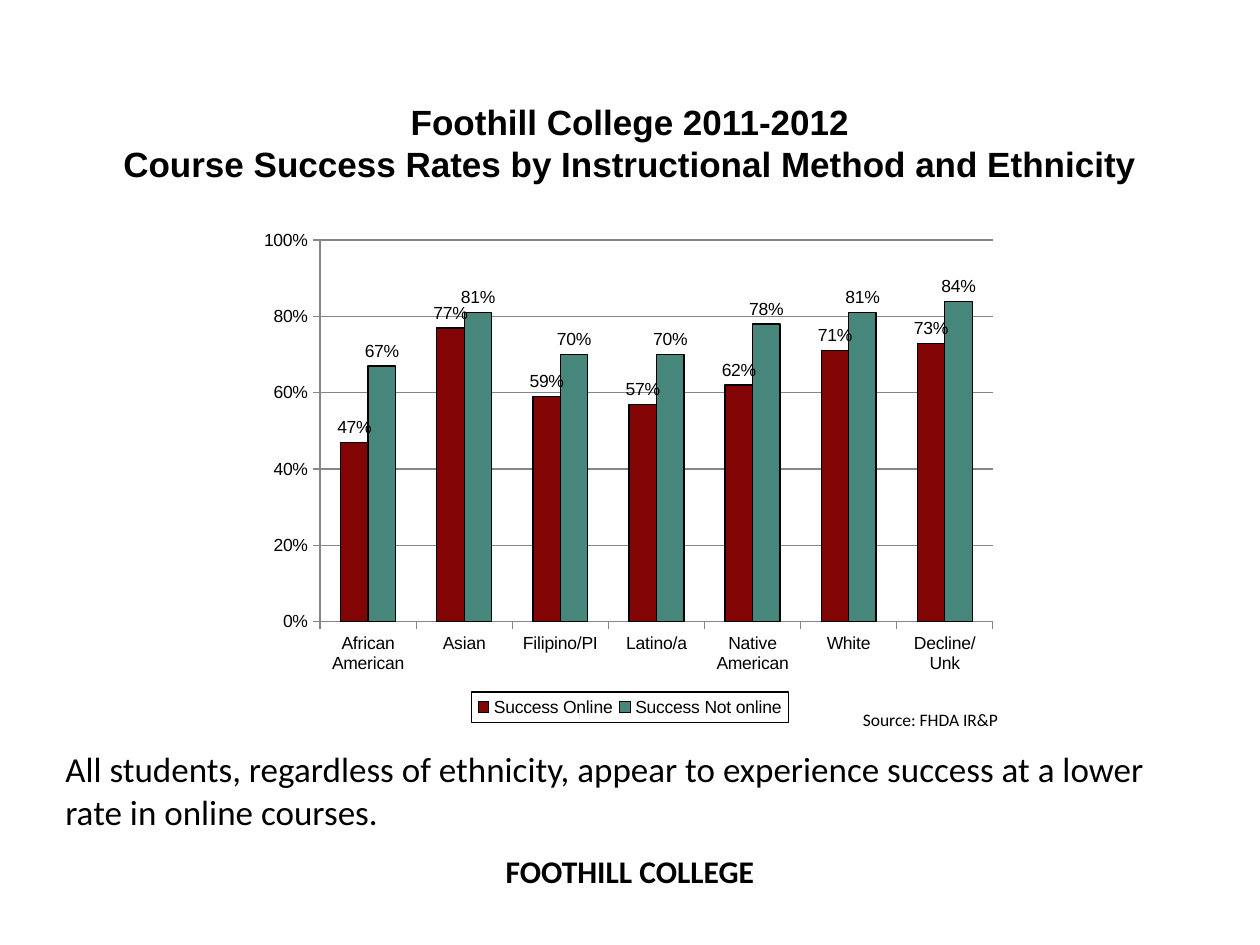
from lxml import etree
from pptx import Presentation
from pptx.chart.data import CategoryChartData
from pptx.dml.color import RGBColor
from pptx.enum.chart import XL_CHART_TYPE, XL_LABEL_POSITION, XL_LEGEND_POSITION, XL_TICK_MARK
from pptx.enum.text import MSO_ANCHOR, PP_ALIGN
from pptx.oxml import parse_xml
from pptx.util import Inches, Pt

COLUMN = XL_CHART_TYPE.COLUMN_CLUSTERED
BOTTOM = XL_LEGEND_POSITION.BOTTOM
OUTSIDE = XL_LABEL_POSITION.OUTSIDE_END
TICK_OUT = XL_TICK_MARK.OUTSIDE
CENTER, LEFT = PP_ALIGN.CENTER, PP_ALIGN.LEFT
TOP, MIDDLE = MSO_ANCHOR.TOP, MSO_ANCHOR.MIDDLE
C = "http://schemas.openxmlformats.org/drawingml/2006/chart"
A = "http://schemas.openxmlformats.org/drawingml/2006/main"

CATEGORIES = ["African American", "Asian", "Filipino/PI", "Latino/a",
              "Native American", "White", "Decline/Unk"]
SERIES = [
    ("Success Online", "820404", [0.47, 0.77, 0.59, 0.57, 0.62, 0.71, 0.73]),
    ("Success Not online", "46867B", [0.67, 0.81, 0.7, 0.7, 0.78, 0.81, 0.84]),
]


def rgb(value):
    return RGBColor.from_string(value)


def manual_layout(x, y, w, h, inner=False):
    """Chart part placed by shares of the chart's size."""
    layout = etree.Element(f"{{{C}}}layout")
    manual = etree.SubElement(layout, f"{{{C}}}manualLayout")
    settings = [("layoutTarget", "inner")] if inner else []
    settings += [("xMode", "edge"), ("yMode", "edge"),
                 ("x", x), ("y", y), ("w", w), ("h", h)]
    for tag, value in settings:
        etree.SubElement(manual, f"{{{C}}}{tag}").set("val", str(value))
    return layout


class SlideBuilder:
    BODY, HEAD = "Calibri", "Arial"
    INK, GRID = "000000", "868686"

    def __init__(self, prs):
        self.width, self.height = prs.slide_width, prs.slide_height
        self.slide = prs.slides.add_slide(prs.slide_layouts[6])

    def box(self, x, y, w, h):
        """Turn shares of the slide's size into lengths."""
        return (int(x * self.width), int(y * self.height),
                int(w * self.width), int(h * self.height))

    def style(self, font, size, name, bold=False):
        font.size, font.name, font.bold = Pt(size), name, bold
        font.color.rgb = rgb(self.INK)

    def text(self, text, area, size, name=BODY, bold=False, align=LEFT, anchor=TOP):
        tf = self.slide.shapes.add_textbox(*self.box(*area)).text_frame
        tf.word_wrap = True
        tf.vertical_anchor = anchor
        tf.text = text
        p = tf.paragraphs[0]
        p.alignment = align
        for r in p.runs:
            self.style(r.font, size, name, bold)

    def column_chart(self, categories, series, area, size=10):
        data = CategoryChartData(number_format="0%")
        data.categories = categories
        for name, _, values in series:
            data.add_series(name, values)
        chart = self.slide.shapes.add_chart(COLUMN, *self.box(*area), data).chart
        chart.has_title = False
        self.style(chart.font, size, self.BODY)

        # Columns and their labels
        plot = chart.plots[0]
        plot.gap_width, plot.overlap, plot.vary_by_categories = 150, 0, False
        for column, (_, color, _) in zip(plot.series, series):
            column.format.fill.solid()
            column.format.fill.fore_color.rgb = rgb(color)
            column.format.line.color.rgb = rgb(self.INK)
            column.format.line.width = Pt(0.75)
            labels = column.data_labels
            labels.show_value = True
            labels.number_format, labels.number_format_is_linked = "0%", False
            labels.position = OUTSIDE
            self.style(labels.font, size, self.HEAD)

        # Axes
        value_axis = chart.value_axis
        value_axis.minimum_scale, value_axis.maximum_scale = 0, 1
        value_axis.major_unit = 0.2
        value_axis.tick_labels.number_format = "0%"
        value_axis.tick_labels.number_format_is_linked = False
        value_axis.major_gridlines.format.line.color.rgb = rgb(self.GRID)
        for axis in (chart.category_axis, value_axis):
            axis.major_tick_mark = TICK_OUT
            axis.format.line.color.rgb = rgb(self.GRID)
            self.style(axis.tick_labels.font, size, self.HEAD)

        # Framed legend
        chart.has_legend = True
        legend = chart.legend
        legend.position, legend.include_in_layout = BOTTOM, False
        self.style(legend.font, size, self.HEAD)
        frame = parse_xml(
            f'<c:spPr xmlns:c="{C}" xmlns:a="{A}"><a:ln w="9525"><a:solidFill>'
            f'<a:srgbClr val="{self.INK}"/></a:solidFill></a:ln></c:spPr>')
        root = chart.element
        for old in root.findall(f".//{{{C}}}layout"):
            old.getparent().remove(old)
        root.find(f".//{{{C}}}legendPos").addnext(
            manual_layout(0.29, 0.94, 0.42, 0.06))
        root.find(f".//{{{C}}}legend/{{{C}}}overlay").addnext(frame)
        root.find(f".//{{{C}}}plotArea").insert(
            0, manual_layout(0.09, 0.04, 0.89, 0.76, inner=True))


def main():
    prs = Presentation()
    prs.slide_width, prs.slide_height = Inches(10), Inches(7.5)
    s = SlideBuilder(prs)

    # Title
    s.text("Foothill College 2011-2012\vCourse Success Rates by Instructional "
           "Method and Ethnicity", (0, 0.056, 1, 0.19), 20, s.HEAD, True, CENTER, MIDDLE)

    # Finding and source
    s.text("All students, regardless of ethnicity, appear to experience success "
           "at a lower rate in online courses.", (0.042, 0.785, 0.917, 0.103), 20)
    s.text("Source: FHDA IR&P", (0.675, 0.744, 0.258, 0.036), 10)

    # Success rates
    s.column_chart(CATEGORIES, SERIES, (0.2, 0.233, 0.6, 0.532))

    # Footer
    s.text("FOOTHILL COLLEGE", (0.05, 0.895, 0.9, 0.053), 18, bold=True, align=CENTER)

    prs.save("out.pptx")


if __name__ == "__main__":
    main()
